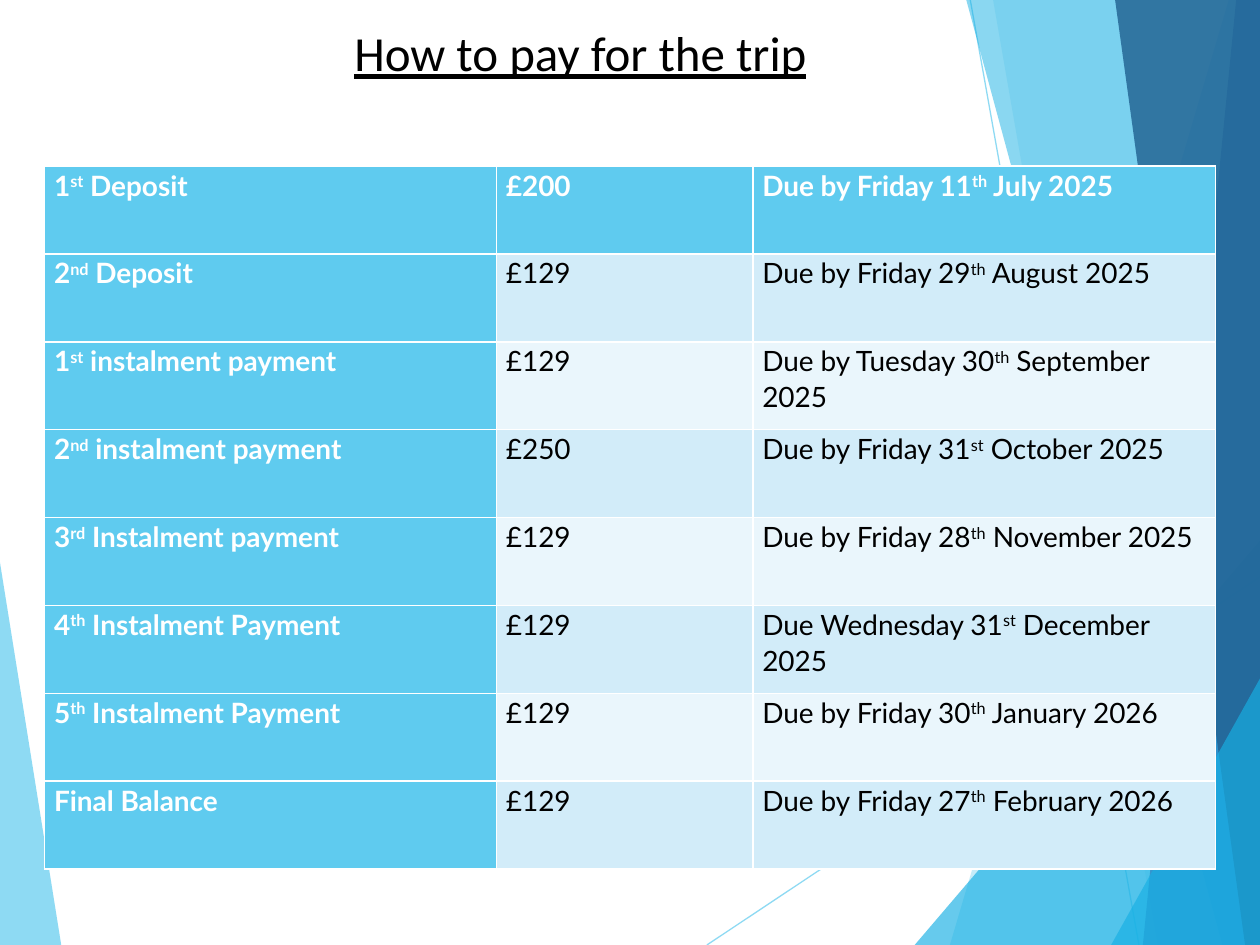
from lxml.etree import SubElement
from pptx import Presentation
from pptx.dml.color import RGBColor
from pptx.enum.shapes import MSO_CONNECTOR
from pptx.enum.text import MSO_ANCHOR, PP_ALIGN
from pptx.oxml.ns import qn
from pptx.util import Cm, Pt

WHITE = RGBColor(0xFF, 0xFF, 0xFF)
BLACK = RGBColor(0, 0, 0)
SKY = RGBColor(0x5F, 0xCB, 0xEF)
CYAN = RGBColor(0x17, 0xB0, 0xE4)
BLUE = RGBColor(0x2E, 0x83, 0xC3)
NAVY = RGBColor(0x22, 0x62, 0x92)
BAND_DARK = RGBColor(0xD2, 0xEC, 0xF9)
BAND_LIGHT = RGBColor(0xEA, 0xF6, 0xFC)

WIDTH, HEIGHT = 25.4, 19.05

RAYS = [((14.25, 19.05), (25.43, 11.61)), ((19.56, 0), (22.96, 19.05))]
LEFT_FACET = ([(-0.03, 11.15), (1.24, 19.08), (-0.03, 19.05)], SKY, 70)
RIGHT_FACETS = [
    ([(24.77, 0), (19.15, 19.05), (25.45, 19.05), (25.43, 0)], SKY, 36),
    ([(20.02, 0), (23.34, 19.05), (25.43, 19.05), (25.43, 0)], SKY, 20),
    ([(18.44, 19.05), (25.4, 10.9), (25.43, 19.05)], CYAN, 66),
    ([(19.48, 0), (24.64, 19.05), (25.43, 19.05), (25.43, 0)], CYAN, 50),
    ([(24.92, 0), (23.04, 19.05), (25.43, 19.05), (25.4, 0)], BLUE, 70),
    ([(22.48, 0), (25.1, 19.05), (25.45, 19.05), (25.4, 0)], NAVY, 82),
    ([(22.4, 19.05), (25.45, 13.59), (25.45, 19.05)], CYAN, 66),
]

PAYMENTS = [
    ("1^st^ Deposit", "£200", "Due by Friday 11^th^ July 2025"),
    ("2^nd^ Deposit", "£129", "Due by Friday 29^th^ August 2025"),
    ("1^st^ instalment payment", "£129", "Due by Tuesday 30^th^ September 2025"),
    ("2^nd^ instalment payment", "£250", "Due by Friday 31^st^ October 2025"),
    ("3^rd^ Instalment payment", "£129", "Due by Friday 28^th^ November 2025"),
    ("4^th^ Instalment Payment", "£129", "Due Wednesday 31^st^ December 2025"),
    ("5^th^ Instalment Payment", "£129", "Due by Friday 30^th^ January 2026"),
    ("Final Balance", "£129", "Due by Friday 27^th^ February 2026"),
]


def set_alpha(sp, percent):
    color = next(sp._element.spPr.iter(qn("a:srgbClr")))
    SubElement(color, qn("a:alpha")).set("val", str(percent * 1000))


def add_facet(s, left, top, points, color, alpha):
    corners = [(Cm(left + x), Cm(top + y)) for x, y in points]
    builder = s.shapes.build_freeform(*corners[0])
    builder.add_line_segments(corners[1:])
    sp = builder.convert_to_shape()
    sp.shadow.inherit = False
    sp.fill.solid()
    sp.fill.fore_color.rgb = color
    sp.line.fill.background()
    set_alpha(sp, alpha)


def add_ray(s, left, top, start, end):
    ends = [Cm(v) for x, y in (start, end) for v in (left + x, top + y)]
    line = s.shapes.add_connector(MSO_CONNECTOR.STRAIGHT, *ends)
    line.line.color.rgb = SKY
    line.line.width = Pt(0.75)
    set_alpha(line, 70)
    SubElement(line._element.spPr, qn("a:effectLst"))


def add_backdrop(s, left, top):
    add_facet(s, left, top, *LEFT_FACET)
    for start, end in RAYS:
        add_ray(s, left, top, start, end)
    for facet in RIGHT_FACETS:
        add_facet(s, left, top, *facet)


def add_title(s, left, top, width, height):
    tf = s.shapes.add_textbox(Cm(left), Cm(top), Cm(width), Cm(height)).text_frame
    tf.word_wrap = True
    tf.vertical_anchor = MSO_ANCHOR.TOP
    p = tf.paragraphs[0]
    p.text = "How to pay for the trip"
    p.alignment = PP_ALIGN.CENTER
    p.font.name = "Calibri"
    p.font.size = Pt(28)
    p.font.underline = True
    p.font.color.rgb = BLACK


def fill_cell(cell, text, fill, color, bold):
    cell.fill.solid()
    cell.fill.fore_color.rgb = fill
    cell.margin_left = cell.margin_right = Cm(0.19)
    cell.margin_top = cell.margin_bottom = 0
    p = cell.text_frame.paragraphs[0]
    p.line_spacing = 1.07
    p.font.name = "Lato"
    p.font.size = Pt(16)
    p.font.bold = bold
    p.font.color.rgb = color
    for i, part in enumerate(text.split("^")):
        r = p.add_run()
        r.text = part
        if i % 2:
            r.font._element.set("baseline", "30000")


def add_payments(s, left, top, width, height):
    frame = s.shapes.add_table(len(PAYMENTS), 3, Cm(left), Cm(top), Cm(width), Cm(height))
    table = frame.table
    table.first_col = True
    for column, share in zip(table.columns, (0.386, 0.219, 0.395)):
        column.width = Cm(width * share)
    for i, payment in enumerate(PAYMENTS):
        table.rows[i].height = Cm(height / len(PAYMENTS))
        band = BAND_DARK if i % 2 else BAND_LIGHT
        for j, text in enumerate(payment):
            heading = i == 0 or j == 0
            fill, color = (SKY, WHITE) if heading else (band, BLACK)
            fill_cell(table.cell(i, j), text, fill, color, heading)


def main():
    prs = Presentation()
    prs.slide_width, prs.slide_height = Cm(WIDTH), Cm(HEIGHT)
    s = prs.slides.add_slide(prs.slide_layouts[6])
    add_backdrop(s, 0, 0)
    add_payments(s, 0.9, 3.35, 23.6, 14.17)
    add_title(s, 6.1, 0.33, 11.2, 2.24)
    prs.save("out.pptx")


if __name__ == "__main__":
    main()
